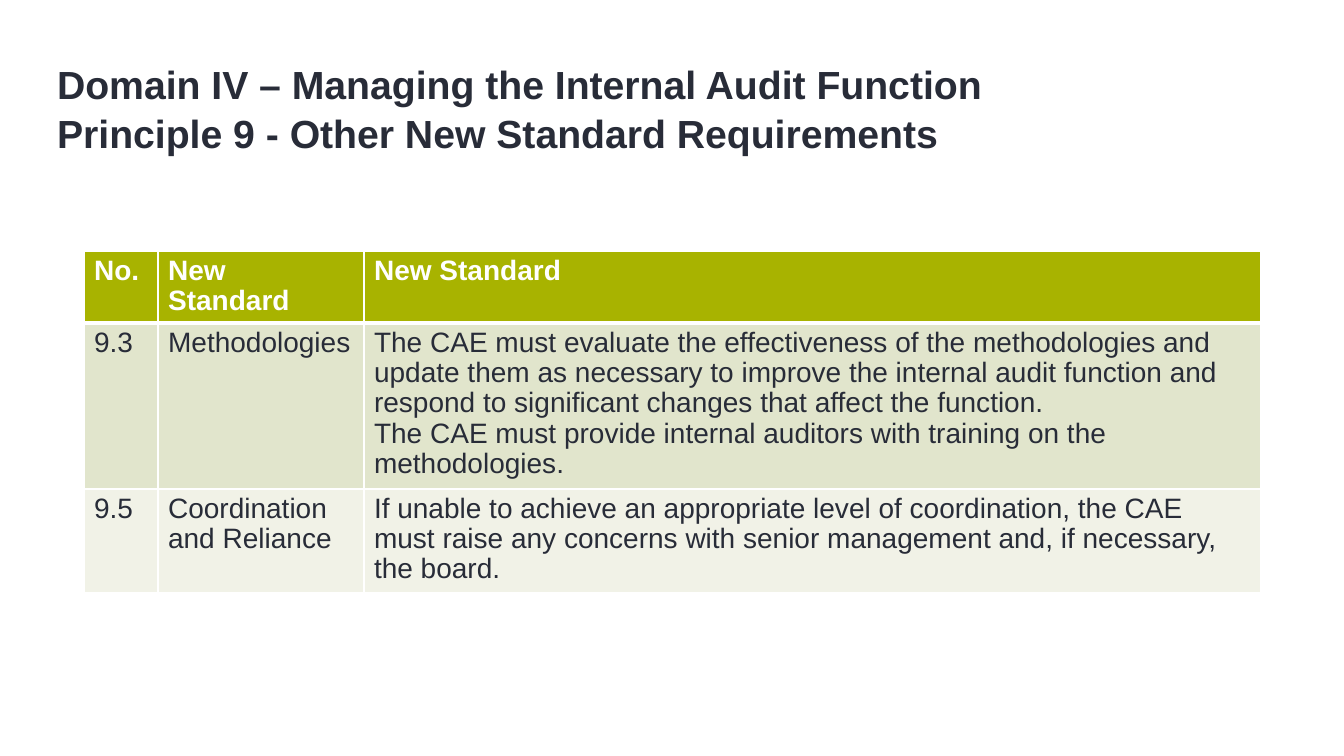
from lxml.etree import SubElement
from pptx import Presentation
from pptx.dml.color import RGBColor
from pptx.enum.text import MSO_ANCHOR, PP_ALIGN
from pptx.oxml.ns import qn
from pptx.util import Pt

EMU_PER_PX = 914400 / 100.8
INK = RGBColor(0x28, 0x2C, 0x38)
WHITE = RGBColor(0xFF, 0xFF, 0xFF)
GREEN = RGBColor(0xA8, 0xB3, 0x00)
SAGE = RGBColor(0xE1, 0xE5, 0xCC)
PALE = RGBColor(0xF1, 0xF2, 0xE7)

TITLE = [
    "Domain IV – Managing the Internal Audit Function",
    "Principle 9 - Other New Standard Requirements",
]
# Each cell is a list of paragraphs
STANDARDS = [
    [["No."], ["New Standard"], ["New Standard"]],
    [["9.3"], ["Methodologies"], [
        "The CAE must evaluate the effectiveness of the methodologies and update "
        "them as necessary to improve the internal audit function and respond to "
        "significant changes that affect the function.",
        "The CAE must provide internal auditors with training on the methodologies.",
    ]],
    [["9.5"], ["Coordination and Reliance"], [
        "If unable to achieve an appropriate level of coordination, the CAE must "
        "raise any concerns with senior management and, if necessary, the board.",
    ]],
]


def px(length):
    return round(length * EMU_PER_PX)


class SlideBuilder:
    def __init__(self, deck, font="Arial"):
        self.font = font
        self.page = deck.slides.add_slide(deck.slide_layouts[5])

    def add_span(self, para, text, size, color, bold):
        span = para.add_run()
        span.text = text
        span.font.name = self.font
        span.font.size = Pt(size)
        span.font.bold = bold
        span.font.color.rgb = color

    def title(self, lines, left, top, width, height):
        box = self.page.shapes.title
        box.left, box.top, box.width, box.height = map(px, (left, top, width, height))
        frame = box.text_frame
        frame.word_wrap = True
        frame.vertical_anchor = MSO_ANCHOR.BOTTOM
        para = frame.paragraphs[0]
        para.alignment = PP_ALIGN.LEFT
        para.line_spacing = 1.04
        for index, line in enumerate(lines):
            if index:
                para.add_line_break()
            self.add_span(para, line, 28, INK, True)

    def border(self, cell, side, points):
        line = SubElement(cell._tc.get_or_add_tcPr(), qn(f"a:{side}"), w=str(Pt(points)))
        fill = SubElement(line, qn("a:solidFill"))
        SubElement(fill, qn("a:srgbClr"), val=str(WHITE))

    def cell(self, cell, texts, fill, color, bold, top_line, bottom_line):
        for side, points in (("lnL", 1), ("lnR", 1), ("lnT", top_line), ("lnB", bottom_line)):
            self.border(cell, side, points)
        cell.fill.solid()
        cell.fill.fore_color.rgb = fill
        frame = cell.text_frame
        for index, text in enumerate(texts):
            para = frame.add_paragraph() if index else frame.paragraphs[0]
            para.line_spacing = 0.97
            self.add_span(para, text, 20, color, bold)

    def table(self, rows, left, top, widths, heights, fills):
        table = self.page.shapes.add_table(
            len(rows), len(widths), px(left), px(top), px(sum(widths)), px(sum(heights))
        ).table
        for column, width in zip(table.columns, widths):
            column.width = px(width)
        for index, (row, height) in enumerate(zip(table.rows, heights)):
            row.height = px(height)
            header = index == 0
            for cell, texts in zip(row.cells, rows[index]):
                self.cell(cell, texts, fills[index], WHITE if header else INK, header,
                          3 if index == 1 else 1, 3 if header else 1)


def main():
    deck = Presentation()
    deck.slide_width, deck.slide_height = px(1344), px(756)
    slide = SlideBuilder(deck)

    # Heading
    slide.title(TITLE, 47, 0, 1103, 161)

    # Standards table
    slide.table(STANDARDS, 84, 251, [74, 206, 897], [72, 166, 104], [GREEN, SAGE, PALE])

    deck.save("out.pptx")


if __name__ == "__main__":
    main()
